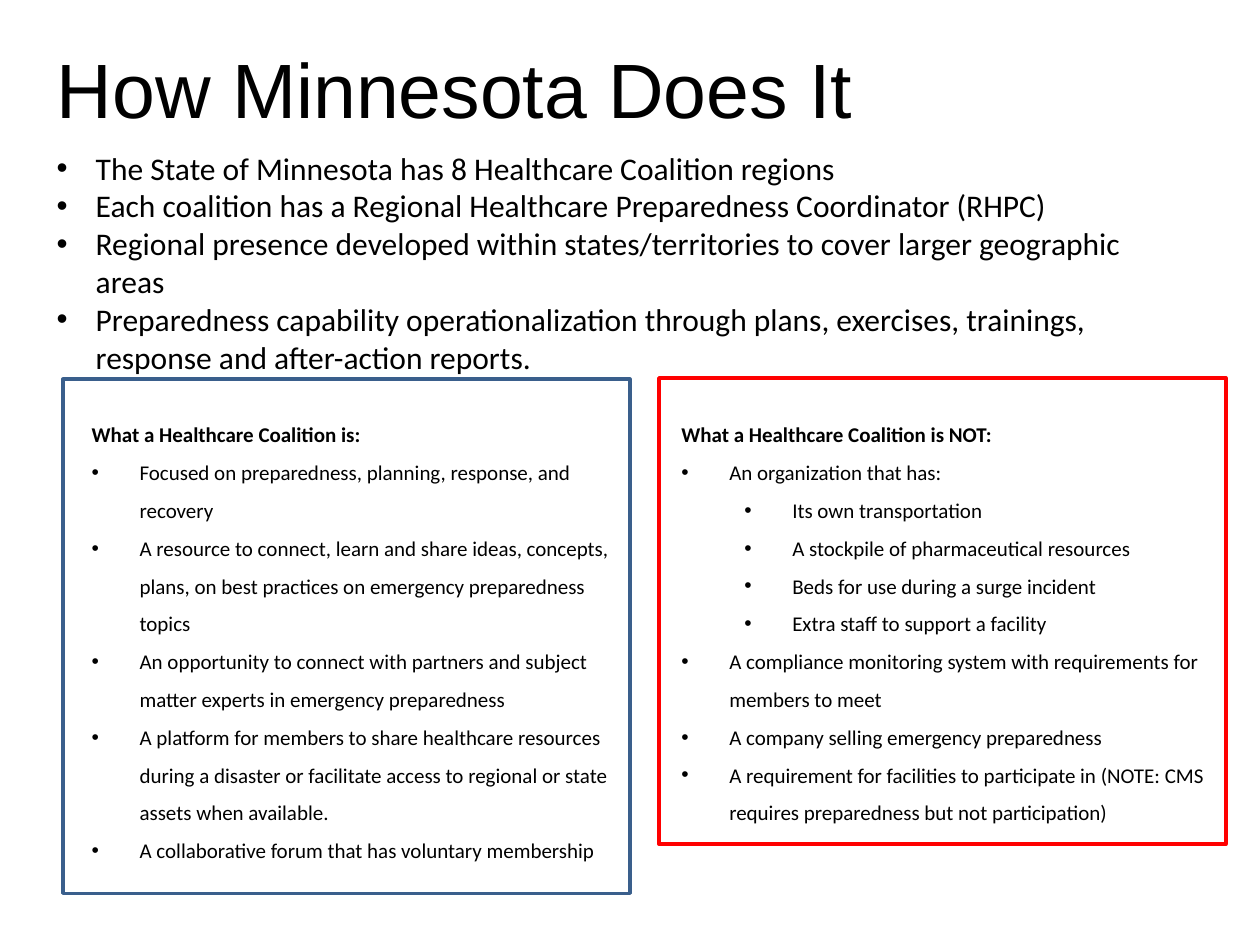
from lxml.etree import SubElement as Sub
from pptx import Presentation
from pptx.dml.color import RGBColor as Rgb
from pptx.enum.shapes import MSO_SHAPE as Kind
from pptx.enum.text import MSO_ANCHOR as Anchor, MSO_AUTO_SIZE as Fit, PP_ALIGN as Align
from pptx.oxml.ns import qn
from pptx.util import Inches, Pt

COLORS = {"ink": "000000", "is": "3A5F8C", "not": "FF0000"}
COLS, ROWS = 100, 75

POINTS = [
    "The State of Minnesota has 8 Healthcare Coalition regions",
    "Each coalition has a Regional Healthcare Preparedness Coordinator (RHPC)",
    "Regional presence developed within states/territories to cover larger geographic areas",
    "Preparedness capability operationalization through plans, exercises, trainings, "
    "response and after-action reports.",
]
# Each item is a pair of level and text
IS_LIST = [
    (0, "Focused on preparedness, planning, response, and recovery"),
    (0, "A resource to connect, learn and share ideas, concepts, plans, "
        "on best practices on emergency preparedness topics"),
    (0, "An opportunity to connect with partners and subject matter experts "
        "in emergency preparedness"),
    (0, "A platform for members to share healthcare resources during a disaster "
        "or facilitate access to regional or state assets when available."),
    (0, "A collaborative forum that has voluntary membership"),
]
NOT_LIST = [
    (0, "An organization that has:"),
    (1, "Its own transportation"),
    (1, "A stockpile of pharmaceutical resources"),
    (1, "Beds for use during a surge incident"),
    (1, "Extra staff to support a facility"),
    (0, "A compliance monitoring system with requirements for members to meet"),
    (0, "A company selling emergency preparedness"),
    (0, "A requirement for facilities to participate in "
        "(NOTE: CMS requires preparedness but not participation)"),
]


def assign(obj, vals):
    for name, val in vals.items():
        setattr(obj, name, val)


class Deck:
    def __init__(self):
        self.prs = Presentation()
        assign(self.prs, {"slide_width": Inches(10), "slide_height": Inches(7.5)})
        self.slide = self.prs.slides.add_slide(self.prs.slide_layouts[1])

    def grid(self, col, row, wide, high):
        dx, dy = self.prs.slide_width / COLS, self.prs.slide_height / ROWS
        return [round(n) for n in (col * dx, row * dy, wide * dx, high * dy)]

    def line(self, frame, text, font, first=False, bullet=None, **form):
        """Write one paragraph; bullet is its left indent and its hang."""
        para = frame.paragraphs[0] if first else frame.add_paragraph()
        assign(para, {"alignment": Align.LEFT, "space_before": Pt(0), **form})
        run = para.add_run()
        run.text = text
        assign(run.font, font)
        run.font.color.rgb = Rgb.from_string(COLORS["ink"])
        if bullet:
            left, hang = bullet
            props = para._p.get_or_add_pPr()
            props.set("marL", str(Inches(left)))
            props.set("indent", str(-Inches(hang)))
            Sub(props, qn("a:buFont")).set("typeface", "Arial")
            Sub(props, qn("a:buChar")).set("char", "•")

    def holder(self, shape, spot, lines, font, bullet=None):
        assign(shape, dict(zip(("left", "top", "width", "height"), self.grid(*spot))))
        frame = shape.text_frame
        sides = ("left", "top", "right", "bottom")
        assign(frame, {f"margin_{side}": 0 for side in sides})
        assign(frame, {"word_wrap": True, "auto_size": Fit.SHAPE_TO_FIT_TEXT,
                       "vertical_anchor": Anchor.TOP})
        for num, text in enumerate(lines):
            self.line(frame, text, font, num == 0, bullet)

    def panel(self, spot, head, items):
        frame = self.slide.shapes.add_textbox(*self.grid(*spot)).text_frame
        assign(frame, {"word_wrap": True, "auto_size": Fit.SHAPE_TO_FIT_TEXT})
        font = {"name": "Calibri", "size": Pt(12)}
        self.line(frame, head, {**font, "bold": True}, True, line_spacing=1.5)
        for level, text in items:
            self.line(frame, text, font, bullet=(0.38 + level / 2, 0.38),
                      level=level, line_spacing=1.5)

    def border(self, spot, color):
        box = self.slide.shapes.add_shape(Kind.RECTANGLE, *self.grid(*spot))
        box.shadow.inherit = False
        box.fill.background()
        box.line.color.rgb = Rgb.from_string(COLORS[color])
        box.line.width = Pt(2)


def main():
    deck = Deck()
    title, body = deck.slide.placeholders

    # Title and main points
    deck.holder(title, (4.5, 3.3, 85.9, 7.4), ["How Minnesota Does It"],
                {"name": "Arial", "size": Pt(44)})
    deck.holder(body, (4.5, 11.8, 88.3, 27.3), POINTS,
                {"name": "Calibri", "size": Pt(18)}, (0.31, 0.31))

    # Two lists, then their frames
    deck.panel((53.1, 32, 45, 34), "What a Healthcare Coalition is NOT:", NOT_LIST)
    deck.panel((6.3, 32, 45, 37), "What a Healthcare Coalition is:", IS_LIST)
    deck.border((5, 30.1, 45, 40.8), "is")
    deck.border((52.3, 30, 45, 37), "not")

    deck.prs.save("out.pptx")


if __name__ == "__main__":
    main()
